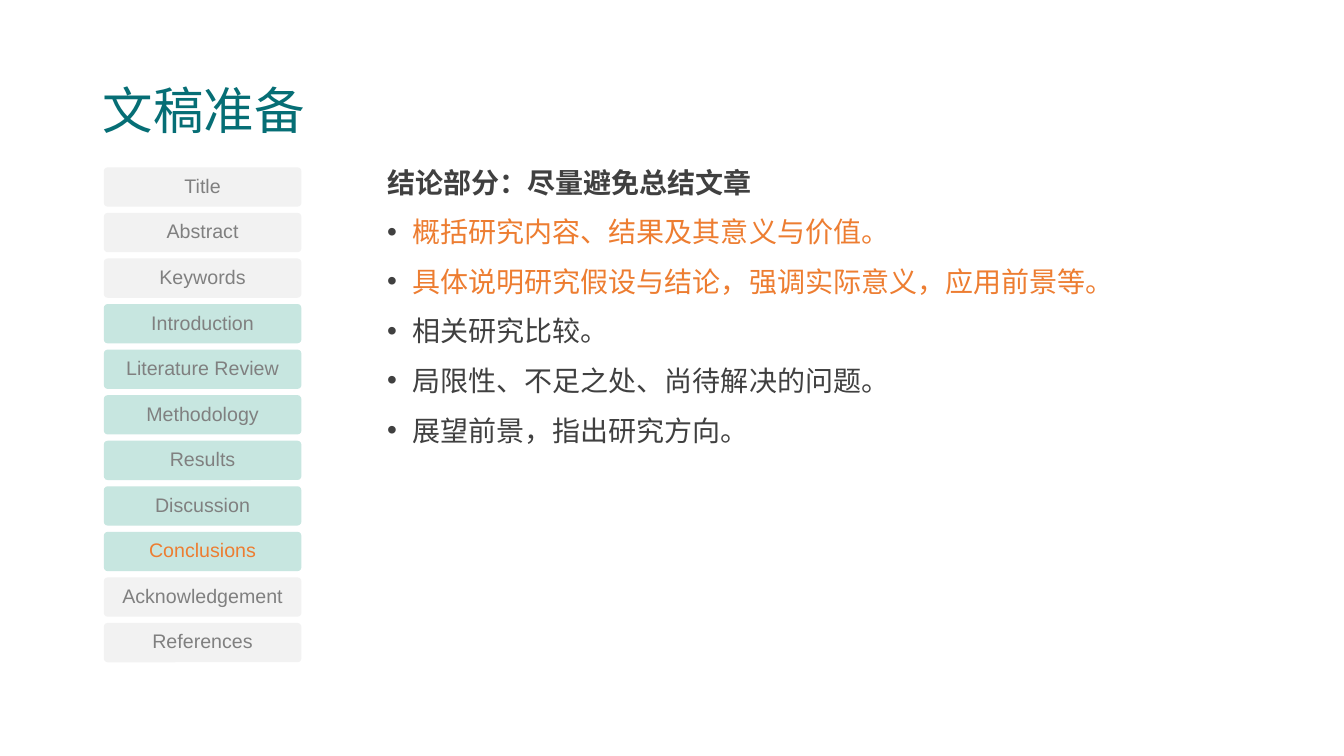
from lxml.etree import SubElement
from pptx import Presentation
from pptx.dml.color import RGBColor
from pptx.enum.shapes import MSO_SHAPE as Shape
from pptx.enum.text import MSO_ANCHOR as Anchor, MSO_AUTO_SIZE as AutoSize, PP_ALIGN as Align
from pptx.oxml.ns import qn
from pptx.util import Inches, Pt

TEAL = RGBColor(0x06, 0x6E, 0x75)
MINT = RGBColor(0xC7, 0xE6, 0xE0)
PALE = RGBColor(0xF2, 0xF2, 0xF2)
GRAY = RGBColor(0x80, 0x80, 0x80)
DARK = RGBColor(0x40, 0x40, 0x40)
ORANGE = RGBColor(0xED, 0x7D, 0x31)

SECTIONS = ["Title", "Abstract", "Keywords", "Introduction", "Literature Review",
            "Methodology", "Results", "Discussion", "Conclusions",
            "Acknowledgement", "References"]
MAIN_TEXT = SECTIONS[3:9]
CURRENT = "Conclusions"
HEADING = "结论部分：尽量避免总结文章"
ADVICE = [("概括研究内容、结果及其意义与价值。", ORANGE),
          ("具体说明研究假设与结论，强调实际意义，应用前景等。", ORANGE),
          ("相关研究比较。", DARK),
          ("局限性、不足之处、尚待解决的问题。", DARK),
          ("展望前景，指出研究方向。", DARK)]


class Page:
    LATIN = "Arial"
    CJK = "Noto Sans CJK SC"

    def __init__(self, deck):
        self.slide = deck.slides.add_slide(deck.slide_layouts[1])

    def place(self, shape, left, top, width, height):
        shape.left, shape.top = Inches(left), Inches(top)
        shape.width, shape.height = Inches(width), Inches(height)

    def style(self, paragraph, font, size, color, bold=False):
        for run in paragraph.runs:
            run.font.name = font
            run.font.size = Pt(size)
            run.font.bold = bold
            run.font.color.rgb = color
            SubElement(run.font._element, qn("a:ea")).set("typeface", self.CJK)

    def title(self, text, *box):
        heading = self.slide.shapes.title
        self.place(heading, *box)
        frame = heading.text_frame
        frame.text = text
        frame.auto_size = AutoSize.NONE
        frame.vertical_anchor = Anchor.MIDDLE
        line = frame.paragraphs[0]
        line.alignment = Align.LEFT
        line.line_spacing = 0.9
        self.style(line, self.LATIN, 36, TEAL)

    def bullet(self, paragraph, shown):
        props = paragraph._p.get_or_add_pPr()
        indent = Inches(0.25) if shown else 0
        props.set("marL", str(indent))
        props.set("indent", str(-indent))
        if not shown:
            SubElement(props, qn("a:buNone"))
            return
        color = SubElement(props, qn("a:buClr"))
        SubElement(color, qn("a:srgbClr")).set("val", str(DARK))
        SubElement(props, qn("a:buFont")).set("typeface", self.LATIN)
        SubElement(props, qn("a:buChar")).set("char", "•")

    def body(self, heading, items, *box):
        content = self.slide.placeholders[1]
        self.place(content, *box)
        frame = content.text_frame
        frame.text = "\n".join([heading] + [text for text, _ in items])
        frame.auto_size = AutoSize.NONE
        colors = [DARK] + [color for _, color in items]
        for index, (line, color) in enumerate(zip(frame.paragraphs, colors)):
            self.bullet(line, index > 0)
            line.line_spacing = 0.81
            line.space_before = Pt(0)
            line.space_after = Pt(16)
            self.style(line, self.CJK, 20, color, bold=index == 0)

    def tab(self, text, fill, color, left, top, width, height):
        button = self.slide.shapes.add_shape(
            Shape.ROUNDED_RECTANGLE, Inches(left), Inches(top), Inches(width), Inches(height))
        button.adjustments[0] = 0.1
        button.shadow.inherit = False
        button.fill.solid()
        button.fill.fore_color.rgb = fill
        button.line.fill.background()
        frame = button.text_frame
        frame.text = text
        frame.word_wrap = True
        frame.vertical_anchor = Anchor.MIDDLE
        frame.margin_left = frame.margin_right = Inches(0.02)
        frame.margin_top = frame.margin_bottom = Inches(0.02)
        label = frame.paragraphs[0]
        label.alignment = Align.CENTER
        label.line_spacing = 0.9
        self.style(label, self.LATIN, 14, color)


def main():
    deck = Presentation()
    deck.slide_width, deck.slide_height = Inches(13.33), Inches(7.5)
    page = Page(deck)
    page.title("文稿准备", 0.92, 0.4, 11.5, 1.45)
    page.body(HEADING, ADVICE, 3.74, 1.65, 8.19, 3.85)
    first, last = 1.66, 6.18
    step = (last - first) / (len(SECTIONS) - 1)
    for row, section in enumerate(SECTIONS):
        fill = MINT if section in MAIN_TEXT else PALE
        color = ORANGE if section == CURRENT else GRAY
        page.tab(section, fill, color, 1.03, first + row * step, 1.96, 0.39)
    deck.save("out.pptx")


if __name__ == "__main__":
    main()
